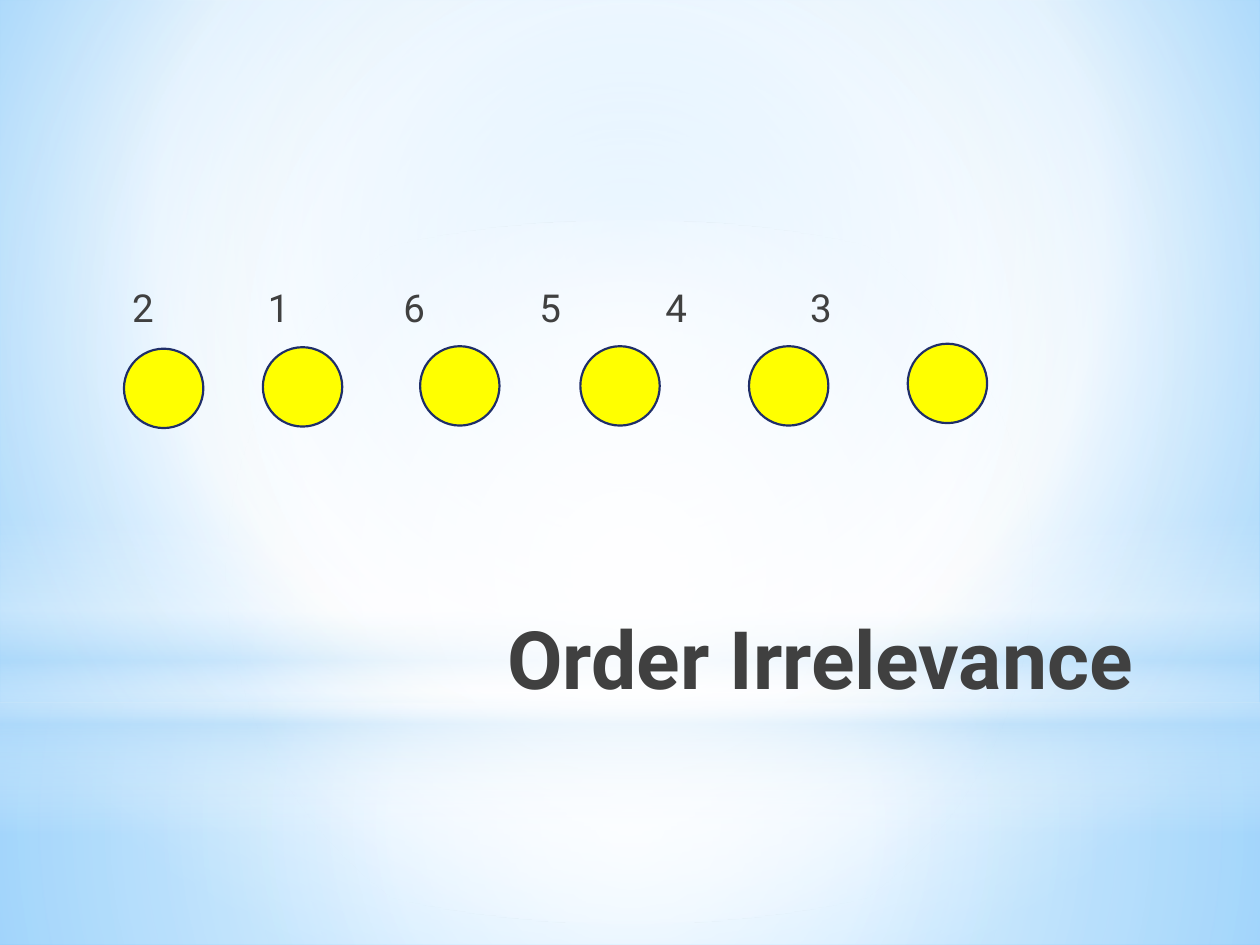
from dataclasses import dataclass

from lxml.etree import SubElement
from pptx import Presentation
from pptx.dml.color import RGBColor
from pptx.dml.fill import FillFormat
from pptx.enum.shapes import MSO_SHAPE as Shape
from pptx.enum.text import MSO_ANCHOR as Anchor, MSO_AUTO_SIZE as AutoSize, PP_ALIGN as Align
from pptx.oxml.ns import qn
from pptx.oxml.xmlchemy import BaseOxmlElement as Element
from pptx.slide import Slide
from pptx.text.text import TextFrame
from pptx.util import Cm, Pt


@dataclass(frozen=True)
class Theme:
    """Colours, font and type sizes of the slide."""
    font: str = "Roboto"
    text: str = "404040"
    disc: str = "FFFF00"
    outline: str = "1F2E69"
    sky: str = "9ED5FF"
    deep: str = "5BB9FF"
    mist: str = "B4DCFA"
    white: str = "FFFFFF"
    title_size: int = 46
    number_size: int = 22


@dataclass(frozen=True)
class Stop:
    """One gradient stop, with position and opacity in percent."""
    pos: int
    color: str
    alpha: int = 100


@dataclass(frozen=True)
class Gradient:
    """A circular gradient around a focus, or a vertical one without it."""
    stops: tuple[Stop, ...]
    focus: tuple[int, int, int, int] | None = (50, 50, 50, 50)


@dataclass(frozen=True)
class Panel:
    """A full-width background layer in centimetres."""
    top: float
    height: float
    gradient: Gradient
    kind: Shape = Shape.RECTANGLE


@dataclass(frozen=True)
class Disc:
    """Top left corner of a counting disc in centimetres."""
    left: float
    top: float


@dataclass(frozen=True)
class Number:
    """A counting number and its horizontal centre in centimetres."""
    text: str
    center: float


T = Theme()
WIDTH, HEIGHT = 25.4, 19.05
DIAMETER = 1.6
NUMBER_TOP, NUMBER_WIDTH, NUMBER_HEIGHT = 5.72, 1.5, 1
BACKDROP = Gradient((Stop(0, T.sky), Stop(60, T.white), Stop(100, T.deep)), (20, 10, 20, 60))
PANELS = (
    Panel(14.17, 4.88, Gradient((Stop(0, T.white, 91), Stop(37, T.white, 76), Stop(100, T.mist, 79)))),
    Panel(0, 14.17, Gradient((Stop(0, T.white, 89), Stop(48, T.white, 62), Stop(100, T.mist, 79)))),
    Panel(10.46, 6.35, Gradient((Stop(0, T.white, 0), Stop(29, T.white, 30), Stop(45, T.mist, 40),
                                 Stop(55, T.white, 26), Stop(65, T.mist, 60), Stop(100, T.white, 0)), None)),
    Panel(4.45, 14.17, Gradient((Stop(0, T.white), Stop(56, T.white, 0))), Shape.OVAL),
)
DISCS = (Disc(2.5, 7.03), Disc(5.3, 7), Disc(8.47, 6.98),
         Disc(11.7, 6.98), Disc(15.1, 6.98), Disc(18.3, 6.93))
NUMBERS = (Number("2", 2.88), Number("1", 5.62), Number("6", 8.35),
           Number("5", 11.09), Number("4", 13.63), Number("3", 16.55))


def apply_gradient(fill: FillFormat, owner: Element, gradient: Gradient) -> None:
    """Give the owner of a fill a gradient with transparent stops."""
    fill.solid()
    solid = owner.find(qn("a:solidFill"))
    grad = owner.makeelement(qn("a:gradFill"), {"rotWithShape": "1"})
    stops = SubElement(grad, qn("a:gsLst"))
    for stop in gradient.stops:
        gs = SubElement(stops, qn("a:gs"), pos=str(stop.pos * 1000))
        color = SubElement(gs, qn("a:srgbClr"), val=stop.color)
        if stop.alpha < 100:
            SubElement(color, qn("a:alpha"), val=str(stop.alpha * 1000))
    if gradient.focus:
        circle = SubElement(grad, qn("a:path"), {"path": "circle"})
        sides = {side: str(value * 1000) for side, value in zip("ltrb", gradient.focus)}
        SubElement(circle, qn("a:fillToRect"), sides)
    else:
        SubElement(grad, qn("a:lin"), ang="5400000", scaled="0")
    owner.replace(solid, grad)


def draw_panel(s: Slide, panel: Panel) -> None:
    """Draw one background layer."""
    sp = s.shapes.add_shape(panel.kind, 0, Cm(panel.top), Cm(WIDTH), Cm(panel.height))
    sp.shadow.inherit = False
    sp.line.fill.background()
    apply_gradient(sp.fill, sp.element.spPr, panel.gradient)


def draw_disc(s: Slide, disc: Disc) -> None:
    """Draw one counting disc."""
    sp = s.shapes.add_shape(Shape.OVAL, Cm(disc.left), Cm(disc.top), Cm(DIAMETER), Cm(DIAMETER))
    sp.shadow.inherit = False
    sp.fill.solid()
    sp.fill.fore_color.rgb = RGBColor.from_string(T.disc)
    sp.line.color.rgb = RGBColor.from_string(T.outline)
    sp.line.width = Pt(1.25)


def write_text(tf: TextFrame, text: str, size: int, align: Align, inset: float, bold: bool = False) -> None:
    """Write a single formatted paragraph from the top of a frame."""
    tf.word_wrap, tf.auto_size, tf.vertical_anchor = True, AutoSize.NONE, Anchor.TOP
    tf.margin_left = tf.margin_right = Cm(0.25)
    tf.margin_top = Cm(inset)
    p = tf.paragraphs[0]
    p.text, p.alignment = text, align
    p.font.name, p.font.size, p.font.bold = T.font, Pt(size), bold
    p.font.color.rgb = RGBColor.from_string(T.text)


def draw_title(s: Slide, text: str) -> None:
    """Place the title above the background layers."""
    sp = s.shapes.title
    s.shapes.element.append(sp.element)
    sp.left, sp.top, sp.width, sp.height = map(Cm, (4.98, 12.14, 18.1, 3.18))
    write_text(sp.text_frame, text, T.title_size, Align.RIGHT, 0.13, bold=True)


def draw_number(s: Slide, number: Number) -> None:
    """Draw one number centred on its position."""
    sp = s.shapes.add_textbox(Cm(number.center - NUMBER_WIDTH / 2), Cm(NUMBER_TOP),
                              Cm(NUMBER_WIDTH), Cm(NUMBER_HEIGHT))
    write_text(sp.text_frame, number.text, T.number_size, Align.CENTER, 0)


def main() -> None:
    """Build and save the slide."""
    prs = Presentation()
    prs.slide_width, prs.slide_height = Cm(WIDTH), Cm(HEIGHT)
    s = prs.slides.add_slide(prs.slide_layouts[5])
    apply_gradient(s.background.fill, s.element.find(".//" + qn("p:bgPr")), BACKDROP)
    for panel in PANELS:
        draw_panel(s, panel)
    draw_title(s, "Order Irrelevance")
    for number in NUMBERS:
        draw_number(s, number)
    for disc in DISCS:
        draw_disc(s, disc)
    prs.save("out.pptx")


if __name__ == "__main__":
    main()
